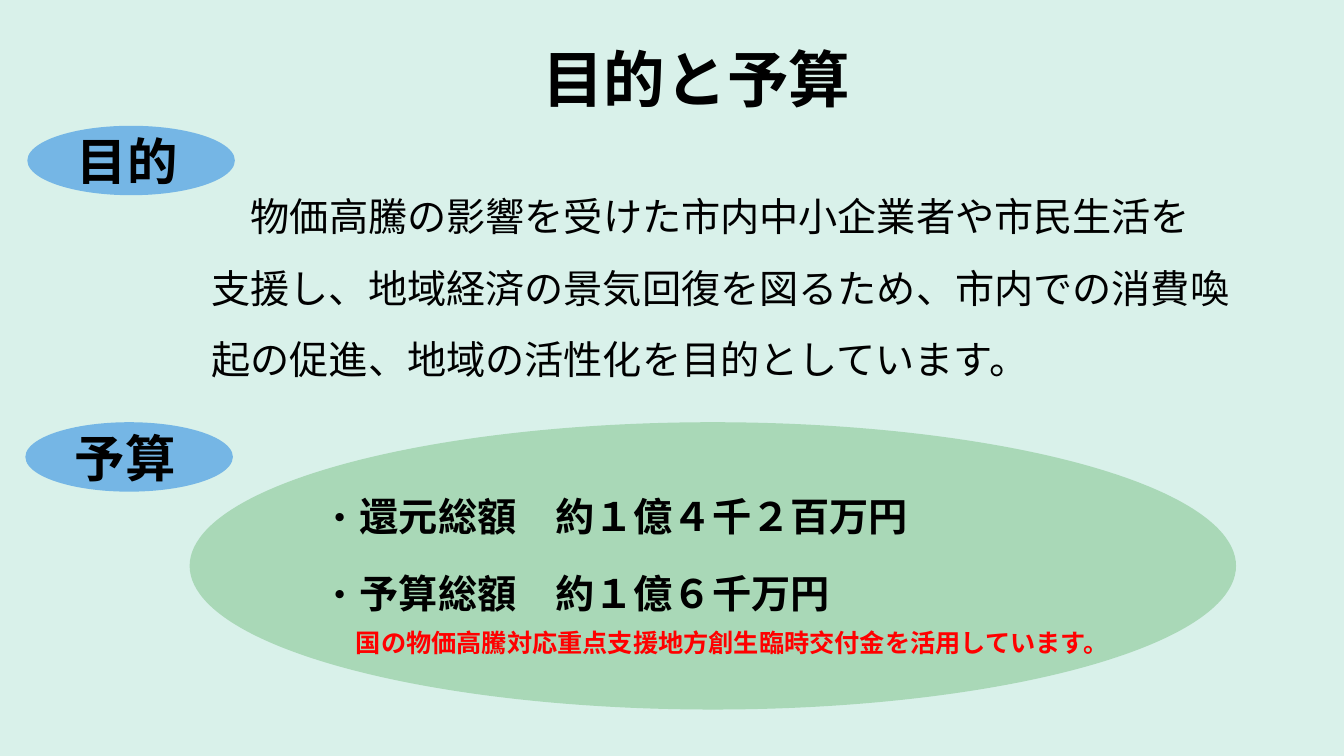
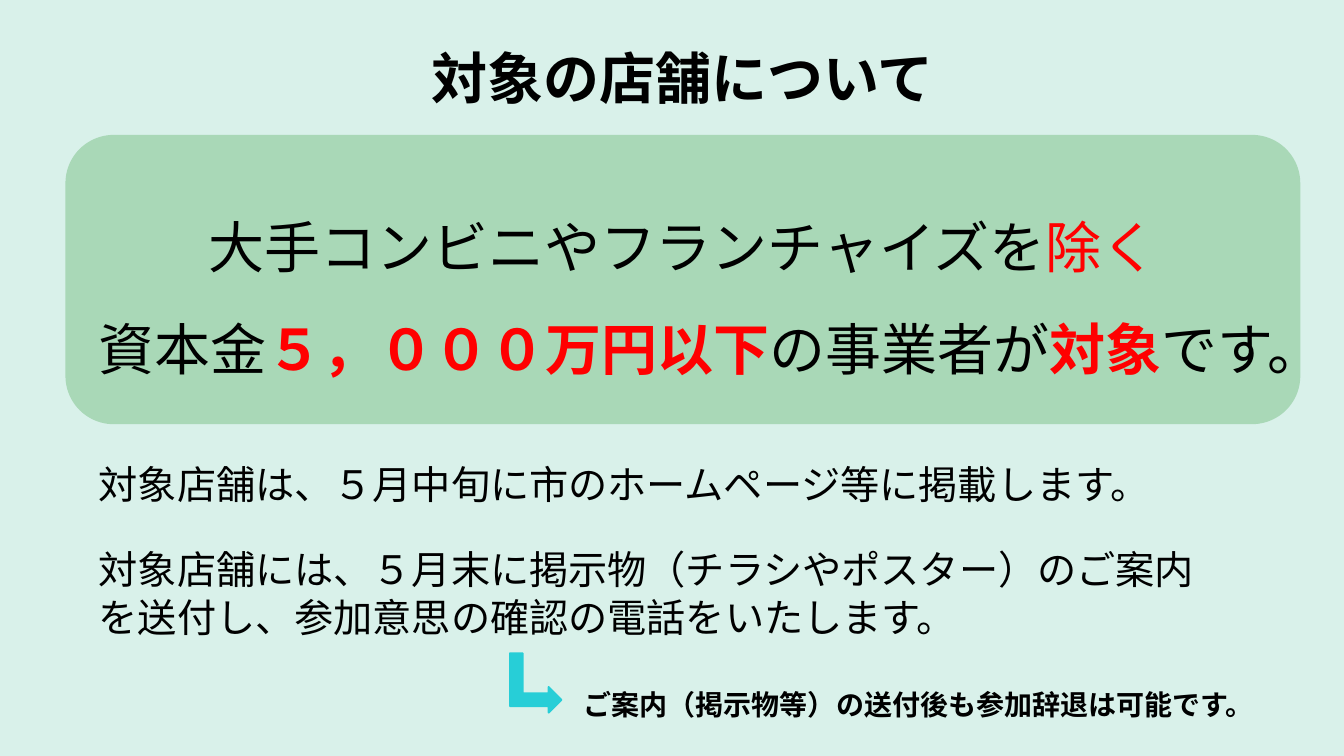
from lxml import etree
from pptx import Presentation
from pptx.dml.color import RGBColor
from pptx.enum.shapes import MSO_SHAPE
from pptx.enum.text import MSO_ANCHOR, MSO_AUTO_SIZE, PP_ALIGN
from pptx.oxml.ns import qn
from pptx.util import Cm, Pt

LEFT, CENTER = PP_ALIGN.LEFT, PP_ALIGN.CENTER
TOP, MIDDLE = MSO_ANCHOR.TOP, MSO_ANCHOR.MIDDLE
NO_AUTOFIT = MSO_AUTO_SIZE.NONE
OVAL, ROUNDED = MSO_SHAPE.OVAL, MSO_SHAPE.ROUNDED_RECTANGLE
BENT_ARROW = MSO_SHAPE.BENT_UP_ARROW

COLORS = {
    "background": "D9F1EA",
    "label": "75B6E5",
    "panel": "A9D8B7",
    "arrow": "27CED7",
    "text": "000000",
    "accent": "FF0000",
}
FONT = "Noto Sans CJK JP"
NOTE_FONT = "Cabin"
SLIDE_W, SLIDE_H = 33.87, 19.05
TITLE_H = 2.1
EM_28 = 0.99  # width of one 28 pt character


def rgb(name):
    return RGBColor.from_string(COLORS[name])


def place(sp, box):
    sp.left, sp.top, sp.width, sp.height = (Cm(v) for v in box)


def style_run(r, size, bold=False, color="text", font=FONT):
    r.font.size, r.font.bold, r.font.name = Pt(size), bold, font
    r.font.color.rgb = rgb(color)
    ea = etree.SubElement(r.font._element, qn("a:ea"))
    ea.set("typeface", FONT)


def set_indent(p, left=0, first=0, bullet=None):
    """Set the indents and the bullet of a paragraph."""
    pPr = p._p.get_or_add_pPr()
    pPr.set("marL", str(Cm(left)))
    pPr.set("indent", str(Cm(first)))
    pPr.set("hangingPunct", "1")
    if bullet:
        font = etree.SubElement(pPr, qn("a:buFont"))
        font.set("typeface", FONT)
        etree.SubElement(pPr, qn("a:buChar")).set("char", bullet)
    else:
        etree.SubElement(pPr, qn("a:buNone"))


def write(sp, paragraphs, size, bold=False, color="text", font=FONT,
          align=LEFT, anchor=MIDDLE, pitch=None, gap=0, indents=()):
    """Fill a shape; a paragraph is a string or a list of (text, color, bold)."""
    tf = sp.text_frame
    tf.word_wrap, tf.auto_size, tf.vertical_anchor = True, NO_AUTOFIT, anchor
    tf.margin_left = tf.margin_right = tf.margin_top = tf.margin_bottom = 0
    for i, runs in enumerate(paragraphs):
        p = tf.paragraphs[0] if i == 0 else tf.add_paragraph()
        p.alignment = align
        p.space_before = Pt(gap if i else 0)
        p.line_spacing = Pt(pitch) if pitch else 1.0
        set_indent(p, **(indents[i] if indents else {}))
        if isinstance(runs, str):
            runs = [(runs, color, bold)]
        for text, run_color, run_bold in runs:
            r = p.add_run()
            r.text = text
            style_run(r, size, run_bold, run_color, font)


def add_text(slide, box, paragraphs, size, **style):
    sp = slide.shapes.add_textbox(*(Cm(v) for v in box))
    write(sp, paragraphs, size, **style)


def add_filled(slide, kind, box, color):
    sp = slide.shapes.add_shape(kind, *(Cm(v) for v in box))
    sp.shadow.inherit = False
    sp.fill.solid()
    sp.fill.fore_color.rgb = rgb(color)
    sp.line.fill.background()
    return sp


def new_slide(prs, title, size, center_x):
    """Add a slide with its title centred on center_x."""
    slide = prs.slides.add_slide(prs.slide_layouts[1])
    width = 17
    place(slide.shapes.title, (center_x - width / 2, 0.9, width, TITLE_H))
    write(slide.shapes.title, [title], size, bold=True, align=CENTER)
    return slide


def add_label(slide, left, top, text):
    sp = add_filled(slide, OVAL, (left, top, 5.23, 1.75), "label")
    write(sp, [text], 36, bold=True, align=CENTER)
    sp.text_frame.margin_right = Cm(0.2)


def add_budget(slide, left, top):
    """Oval with the budget list and its funding note."""
    add_filled(slide, OVAL, (left, top, 26.37, 7.24), "panel")
    items = ["還元総額　約１億４千２百万円", "予算総額　約１億６千万円"]
    bullet = {"left": EM_28, "first": -EM_28, "bullet": "・"}
    add_text(slide, (left + 3.3, top + 1, 20, 3.9), items, 28, bold=True,
             anchor=TOP, pitch=55, indents=[bullet] * len(items))
    add_text(slide, (left + 4.19, top + 4.9, 20, 1.3),
             ["国の物価高騰対応重点支援地方創生臨時交付金を活用しています。"],
             18, bold=True, color="accent")


def add_target_panel(slide, box):
    """Rounded panel stating which shops take part."""
    sp = add_filled(slide, ROUNDED, box, "panel")
    write(sp, [
        [("大手コンビニやフランチャイズを", "text", False),
         ("除く", "accent", False)],
        [("資本金", "text", False), ("５，０００万円以下", "accent", True),
         ("の事業者が", "text", False), ("対象", "accent", True),
         ("です。", "text", False)],
    ], 40, align=CENTER, pitch=73)


def add_arrow_note(slide, left, top):
    """Bent arrow leading to the closing remark."""
    arrow = add_filled(slide, BENT_ARROW, (left, top, 1.5, 1.3), "arrow")
    arrow.rotation = 90
    arrow.line.color.rgb = rgb("arrow")
    arrow.line.width = Pt(1.25)
    add_text(slide, (left + 1.96, top + 0.6, 17.3, 1.16),
             ["ご案内（掲示物等）の送付後も参加辞退は可能です。"],
             20, bold=True, font=NOTE_FONT)


def build_purpose(prs):
    slide = new_slide(prs, "目的と予算", 44, 17.55)
    body = slide.placeholders[1]
    place(body, (5.33, 4.24, 26.6, 5.5))
    write(body, [
        "物価高騰の影響を受けた市内中小企業者や市民生活を",
        "支援し、地域経済の景気回復を図るため、市内での消費喚起の促進、"
        "地域の活性化を目的としています。",
    ], 28, anchor=TOP, pitch=51, indents=[{"first": EM_28}, {}])
    add_label(slide, 0.69, 3.17, "目的")
    add_label(slide, 0.64, 10.64, "予算")
    add_budget(slide, 4.78, 10.64)


def build_shops(prs):
    slide = new_slide(prs, "対象の店舗について", 40, 17.2)
    add_target_panel(slide, (1.65, 3.4, 31.12, 7.29))
    body = slide.placeholders[1]
    place(body, (2.49, 11.58, 28.42, 4.6))
    write(body, [
        "対象店舗は、５月中旬に市のホームページ等に掲載します。",
        "対象店舗には、５月末に掲示物（チラシやポスター）のご案内を送付し、"
        "参加意思の確認の電話をいたします。",
    ], 28, anchor=TOP, pitch=34, gap=27)
    add_arrow_note(slide, 12.75, 16.56)


def main():
    prs = Presentation()
    prs.slide_width, prs.slide_height = Cm(SLIDE_W), Cm(SLIDE_H)
    fill = prs.slide_master.background.fill
    fill.solid()
    fill.fore_color.rgb = rgb("background")
    build_purpose(prs)
    build_shops(prs)
    prs.save("out.pptx")


if __name__ == "__main__":
    main()
